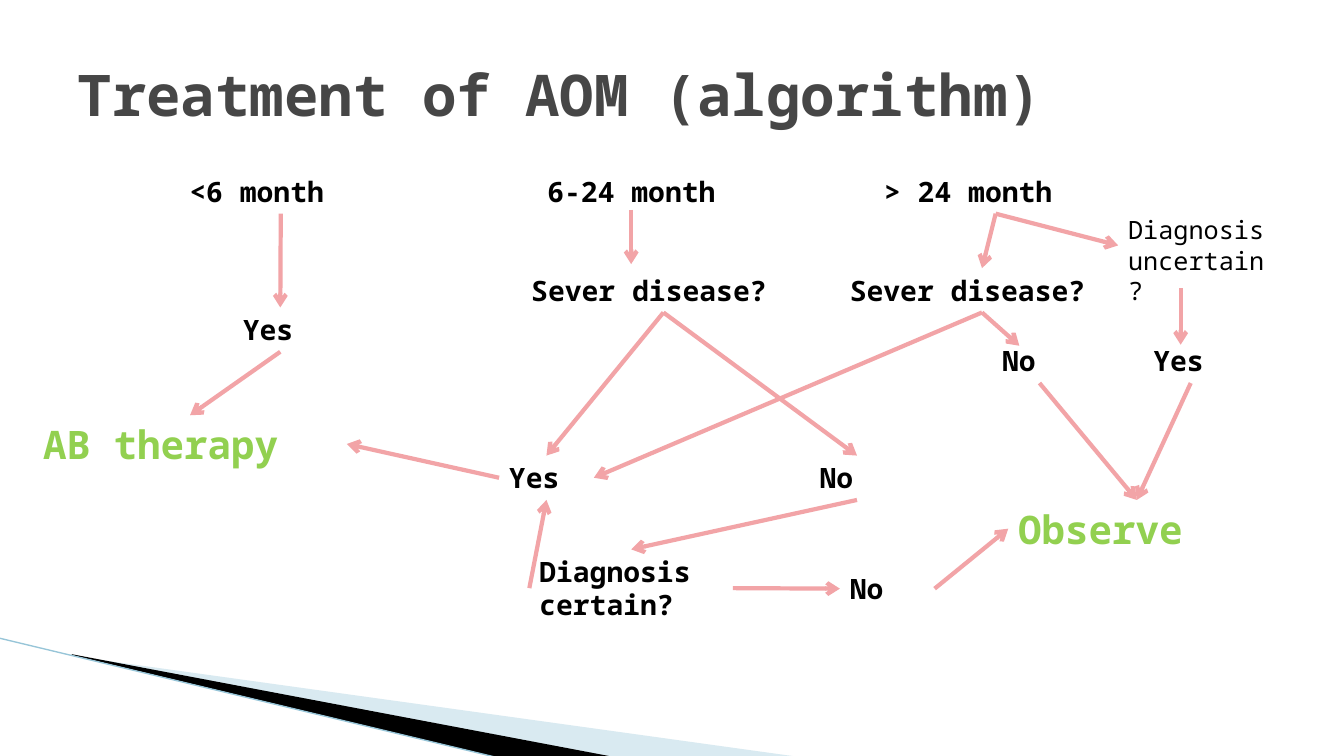
from dataclasses import dataclass

from lxml.etree import SubElement
from pptx import Presentation
from pptx.dml.color import RGBColor
from pptx.enum.shapes import MSO_CONNECTOR as Connector
from pptx.enum.text import MSO_ANCHOR as Anchor, MSO_AUTO_SIZE as AutoSize, PP_ALIGN as Align
from pptx.oxml.ns import qn
from pptx.util import Inches, Pt


@dataclass(frozen=True)
class Theme:
    font: str = "Noto Sans Mono"
    title: str = "464646"
    text: str = "000000"
    outcome: str = "92D050"
    arrow: str = "F2A4A7"
    pale_wedge: str = "A0CBDC"
    dark_wedge: str = "000000"
    edge: str = "97C5D8"
    title_size: float = 41
    outcome_size: float = 28
    step_size: float = 20
    note_size: float = 18
    arrow_width: float = 3
    edge_width: float = 0.95


THEME = Theme()
TOP, LEFT, BOTTOM, RIGHT = range(4)

# Style name: size, colour, bold
STYLES = {
    "title": (THEME.title_size, THEME.title, True),
    "step": (THEME.step_size, THEME.text, True),
    "note": (THEME.note_size, THEME.text, False),
    "outcome": (THEME.outcome_size, THEME.outcome, True),
}

# Step name: text, style, left, top, width, height
STEPS = {
    "infant": ("<6 month", "step", 1.78, 1.68, 2.01, 0.44),
    "toddler": ("6-24 month", "step", 5.33, 1.68, 2.41, 0.44),
    "child": ("> 24 month", "step", 8.67, 1.68, 2.41, 0.44),
    "therapy": ("AB therapy", "outcome", 0.33, 4.12, 3.11, 0.57),
    "toddler severe": ("Sever disease?", "step", 5.17, 2.66, 2.82, 0.44),
    "infant yes": ("Yes", "step", 2.31, 3.05, 0.94, 0.44),
    "certain": ("Diagnosis certain?", "step", 5.25, 5.45, 2.02, 0.77),
    "toddler no": ("No", "step", 8.03, 4.52, 0.94, 0.44),
    "treat yes": ("Yes", "step", 4.95, 4.52, 0.94, 0.44),
    "observe": ("Observe", "outcome", 10, 4.96, 2.55, 0.57),
    "certain no": ("No", "step", 8.33, 5.62, 0.94, 0.44),
    "child severe": ("Sever disease?", "step", 8.33, 2.66, 2.82, 0.44),
    "child no": ("No", "step", 9.84, 3.36, 0.94, 0.44),
    "uncertain": ("Diagnosis uncertain?", "note", 11.09, 2.08, 1.68, 0.71),
    "uncertain yes": ("Yes", "step", 11.34, 3.36, 0.94, 0.44),
}

# Each end is a step with a side, or a free point
ARROWS = [
    (("infant", BOTTOM), ("infant yes", TOP)),
    (("infant yes", BOTTOM), ("therapy", TOP)),
    ((6.26, 2.08), (6.26, 2.62)),
    (("child", BOTTOM), ("child severe", TOP)),
    (("child", BOTTOM), ("uncertain", LEFT)),
    (("child severe", BOTTOM), (10.11, 3.43)),
    (("child severe", BOTTOM), ("treat yes", RIGHT)),
    (("child no", BOTTOM), ("observe", TOP)),
    (("uncertain yes", BOTTOM), ("observe", TOP)),
    ((11.71, 2.86), (11.71, 3.42)),
    (("toddler severe", BOTTOM), ("toddler no", TOP)),
    (("certain", RIGHT), ("certain no", LEFT)),
    (("toddler no", BOTTOM), ("certain", TOP)),
    (("certain", LEFT), ("treat yes", BOTTOM)),
    (("treat yes", LEFT), ("therapy", RIGHT)),
    (("toddler severe", BOTTOM), ("treat yes", TOP)),
    (("certain no", RIGHT), ("observe", LEFT)),
]


def write(box, text, style):
    size, color, bold = STYLES[style]
    para = box.text_frame.paragraphs[0]
    para.alignment = Align.LEFT
    span = para.add_run()
    span.text = text
    span.font.name = THEME.font
    span.font.size = Pt(size)
    span.font.bold = bold
    span.font.color.rgb = RGBColor.from_string(color)


def place_title(page, text):
    title = page.shapes.title
    title.left, title.top = Inches(0.67), Inches(0.3)
    title.width, title.height = Inches(12), Inches(1.25)
    title.text_frame.vertical_anchor = Anchor.MIDDLE
    title.text_frame.auto_size = AutoSize.NONE
    write(title, text, "title")


def add_step(page, text, style, *bounds):
    box = page.shapes.add_textbox(*map(Inches, bounds))
    box.text_frame.word_wrap = True
    box.text_frame.auto_size = AutoSize.SHAPE_TO_FIT_TEXT
    write(box, text, style)
    return box


def add_wedge(page, points, color, opacity=100):
    corners = [(Inches(x), Inches(y)) for x, y in points]
    builder = page.shapes.build_freeform(*corners[0])
    builder.add_line_segments(corners[1:], close=True)
    wedge = builder.convert_to_shape()
    wedge.shadow.inherit = False
    wedge.line.fill.background()
    wedge.fill.solid()
    wedge.fill.fore_color.rgb = RGBColor.from_string(color)
    if opacity < 100:
        tint = wedge.fill._xPr.find(qn("a:solidFill"))[0]
        SubElement(tint, qn("a:alpha")).set("val", str(opacity * 1000))


def add_line(page, start, end, color, width):
    points = map(Inches, (*start, *end))
    line = page.shapes.add_connector(Connector.STRAIGHT, *points)
    line.line.color.rgb = RGBColor.from_string(color)
    line.line.width = Pt(width)
    SubElement(line._element.spPr, qn("a:effectLst"))
    return line


def add_arrow(page, boxes, start, end):
    free = [(0, 0) if point[0] in boxes else point for point in (start, end)]
    arrow = add_line(page, *free, THEME.arrow, THEME.arrow_width)
    for point, connect in ((start, arrow.begin_connect), (end, arrow.end_connect)):
        if point[0] in boxes:
            connect(boxes[point[0]], point[1])
    SubElement(arrow.line._get_or_add_ln(), qn("a:tailEnd")).set("type", "arrow")


def main():
    deck = Presentation()
    deck.slide_width, deck.slide_height = Inches(13.33), Inches(7.5)
    page = deck.slides.add_slide(deck.slide_layouts.get_by_name("Title Only"))

    # Corner decoration
    add_wedge(page, [(0.73, 6.51), (7.93, 7.51), (6.08, 7.51), (0.73, 6.5)],
              THEME.pale_wedge, 40)
    add_wedge(page, [(0.71, 6.49), (6.09, 7.51), (4.96, 7.52), (0.72, 6.5)],
              THEME.dark_wedge)
    add_line(page, (-0.01, 6.33), (4.95, 7.52), THEME.edge, THEME.edge_width)

    # Title and decision steps
    place_title(page, "Treatment of AOM (algorithm)")
    boxes = {name: add_step(page, *step) for name, step in STEPS.items()}

    # Flow between the steps
    for start, end in ARROWS:
        add_arrow(page, boxes, start, end)

    deck.save("out.pptx")


if __name__ == "__main__":
    main()
